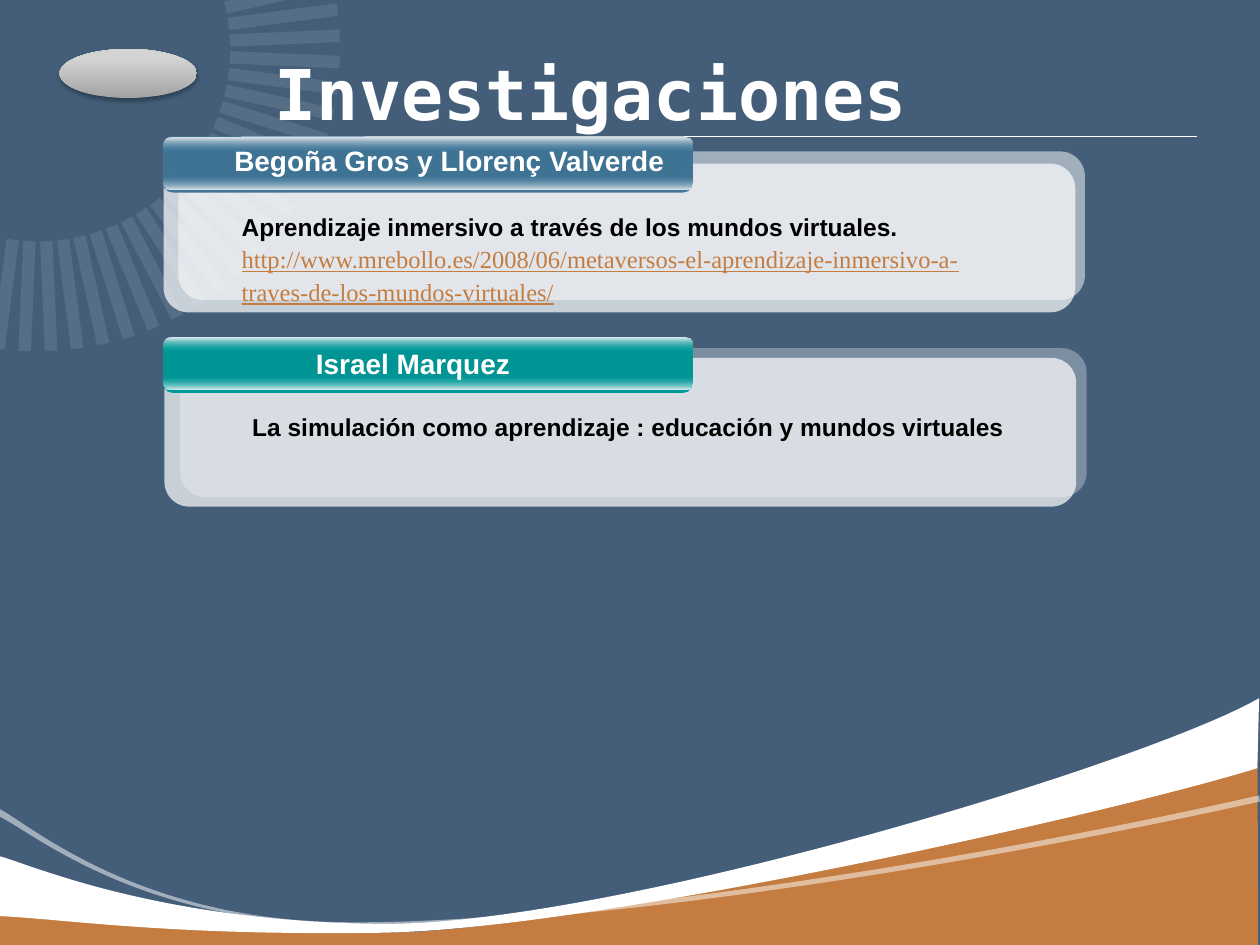
from math import cos, radians, sin

from lxml.etree import SubElement
from pptx import Presentation
from pptx.dml.color import RGBColor
from pptx.enum.shapes import MSO_CONNECTOR, MSO_SHAPE
from pptx.enum.text import MSO_ANCHOR, PP_ALIGN
from pptx.oxml.ns import qn
from pptx.util import Pt

TITLE = "Investigaciones"
CARDS = [
    dict(name="Begoña Gros y Llorenç Valverde", name_box=(116, 78.5, 281.5, 27),
         tab=(93, 78), back=(102, 86.5), front=(93.5, 93.5), back_alpha=50,
         color="417799", middle="3F7394", shine="E8EBEE",
         body="Aprendizaje inmersivo a través de los mundos virtuales. ",
         link="http://www.mrebollo.es/2008/06/metaversos-el-aprendizaje-inmersivo-a-traves-de-los-mundos-virtuales/",
         body_box=(131, 116, 455, 63)),
    dict(name="Israel Marquez", name_box=(110, 194.5, 252, 27),
         tab=(93, 192.5), back=(103, 199), front=(94, 204.5), back_alpha=30,
         color="009999", middle="009494", shine="EBF2F2",
         body="La simulación como aprendizaje : educación y mundos virtuales",
         link="", body_box=(137, 230.5, 455, 24.5)),
]
WAVES = [
    ("C47C40", 100, [
        (-2, 540), (719, 542), (718.5, 403),
        ((656, 440.5), (350.5, 533.5), (218, 533)),
        ((86.5, 532), (12, 497), (-2, 493))]),
    ("FFFFFF", 100, [
        (-1, 523.5),
        ((36, 525), (95, 535), (221, 533)),
        ((346, 530), (636, 464.5), (718.5, 439)), (719.5, 399),
        ((656.5, 435.5), (351.5, 528.5), (219, 528)),
        ((87, 527), (13, 492), (-1.5, 489))]),
    ("FFFFFF", 50, [
        (-2, 461.5),
        ((12, 466.5), (73.5, 525.5), (196, 527)),
        ((318, 528.5), (543.5, 494.5), (719.5, 454.5)), (720, 458),
        ((540, 498), (317, 531.5), (196, 528.5)),
        ((75.5, 526.5), (17, 474), (-1.5, 466))]),
]
RAY_CENTER, RAY_RADIUS, RAY_SIZE = (21.6, 28), 141.3, (62.8, 7.1)
RAY_COUNT, RAY_FIRST, RAY_STEP = 23, 97.5, 5
TAB_SIZE, GLOSS_SIZE = (303, 32), (302, 8)
BACK_SIZE, FRONT_SIZE = (518, 85), (521, 85)


def rgb(color):
    return RGBColor.from_string(color)


def add_color(parent, color, alpha=100):
    clr = SubElement(parent, qn("a:srgbClr"), val=color)
    if alpha < 100:
        SubElement(clr, qn("a:alpha"), val=str(alpha * 1000))


def paint(sp, color, alpha=100):
    sp.shadow.inherit = False
    sp.line.fill.background()
    sp.fill.solid()
    sp.fill.fore_color.rgb = rgb(color)
    if alpha < 100:
        clr = sp._element.spPr.find(qn("a:solidFill"))[0]
        SubElement(clr, qn("a:alpha"), val=str(alpha * 1000))


def paint_gradient(sp, stops, angle=90):
    paint(sp, stops[0][1])
    spPr = sp._element.spPr
    solid = spPr.find(qn("a:solidFill"))
    grad = SubElement(spPr, qn("a:gradFill"), rotWithShape="1")
    gs_list = SubElement(grad, qn("a:gsLst"))
    for position, *color in stops:
        add_color(SubElement(gs_list, qn("a:gs"), pos=str(position * 1000)), *color)
    SubElement(grad, qn("a:lin"), ang=str(angle * 60000), scaled="0")
    spPr.replace(solid, grad)


def add_preset(s, kind, pos, size, radius=None):
    sp = s.shapes.add_shape(kind, *map(Pt, (*pos, *size)))
    if radius is not None:
        sp.adjustments[0] = radius
    return sp


def add_text(s, box, text, size, color, font="Arial"):
    tf = s.shapes.add_textbox(*map(Pt, box)).text_frame
    tf.word_wrap = True
    p = tf.paragraphs[0]
    p.add_run().text = text
    p.font.size, p.font.bold, p.font.name = Pt(size), True, font
    p.font.color.rgb = rgb(color)
    return tf, p


def curve_points(start, segment, steps=40):
    for i in range(1, steps + 1):
        t = i / steps
        weights = (1 - t) ** 3, 3 * t * (1 - t) ** 2, 3 * t * t * (1 - t), t ** 3
        yield tuple(sum(w * pt[axis] for w, pt in zip(weights, (start, *segment)))
                    for axis in (0, 1))


def add_wave(s, color, alpha, outline):
    points = [outline[0]]
    for part in outline[1:]:
        points += curve_points(points[-1], part) if len(part) == 3 else [part]
    points = [(Pt(x), Pt(y)) for x, y in points]
    builder = s.shapes.build_freeform(*points[0])
    builder.add_line_segments(points[1:], close=True)
    paint(builder.convert_to_shape(), color, alpha)


def add_rays(s):
    w, h = RAY_SIZE
    for i in range(RAY_COUNT):
        angle = RAY_FIRST - i * RAY_STEP
        x = RAY_CENTER[0] + RAY_RADIUS * cos(radians(angle))
        y = RAY_CENTER[1] + RAY_RADIUS * sin(radians(angle))
        ray = add_preset(s, MSO_SHAPE.RECTANGLE, (x - w / 2, y - h / 2), RAY_SIZE)
        ray.rotation = angle
        paint(ray, "F8F8F8", 10)


def add_card(s, card):
    rounded = MSO_SHAPE.ROUNDED_RECTANGLE
    paint(add_preset(s, rounded, card["back"], BACK_SIZE, 0.167), "FFFFFF", card["back_alpha"])
    paint(add_preset(s, rounded, card["front"], FRONT_SIZE, 0.167), "FFFFFF", 70)
    color, shine = card["color"], card["shine"]
    x, y = card["tab"]
    paint_gradient(add_preset(s, rounded, (x, y), TAB_SIZE, 0.175),
                   [(0, color), (50, card["middle"]), (100, color)])
    for dy, stops in ((22.3, [(0, color, 0), (100, shine)]),
                      (0.5, [(0, shine), (100, color, 0)])):
        paint_gradient(add_preset(s, rounded, (x + 0.5, y + dy), GLOSS_SIZE, 0.5), stops)
    _, p = add_text(s, card["name_box"], card["name"], 16, "FFFFFF")
    p.alignment = PP_ALIGN.CENTER
    _, p = add_text(s, card["body_box"], card["body"], 14, "000000")
    p.line_spacing = 1.1
    if card["link"]:
        r = p.add_run()
        r.text = card["link"]
        r.font.name, r.font.bold, r.font.underline = "Times New Roman", False, True
        r.font.color.rgb = rgb("C47C40")


def add_badge(s):
    sp = add_preset(s, MSO_SHAPE.OVAL, (34, 28), (78.5, 28))
    paint_gradient(sp, [(0, "A3A3A3"), (80, "D3D3D3"), (100, "D4D4D4")], 270)
    effects = sp._element.spPr.find(qn("a:effectLst"))
    shadow = SubElement(effects, qn("a:outerShdw"), blurRad=str(Pt(3.1)), dist=str(Pt(1.8)),
                        dir="5400000", rotWithShape="0")
    add_color(shadow, "000000", 35)


def main():
    prs = Presentation()
    prs.slide_width, prs.slide_height = Pt(720), Pt(540)
    s = prs.slides.add_slide(prs.slide_layouts[6])
    s.background.fill.solid()
    s.background.fill.fore_color.rgb = rgb("445E7A")
    rule = s.shapes.add_connector(MSO_CONNECTOR.STRAIGHT, *map(Pt, (138, 78, 684, 78)))
    rule.line.color.rgb = rgb("FFFFFF")
    rule.line.width = Pt(0.75)
    SubElement(rule._element.spPr, qn("a:effectLst"))
    add_rays(s)
    for wave in WAVES:
        add_wave(s, *wave)
    for card in CARDS:
        add_card(s, card)
    tf, _ = add_text(s, (150, 18, 534, 70), TITLE, 40, "FFFFFF", "DejaVu Sans Mono")
    tf.vertical_anchor = MSO_ANCHOR.MIDDLE
    add_badge(s)
    prs.save("out.pptx")


if __name__ == "__main__":
    main()
